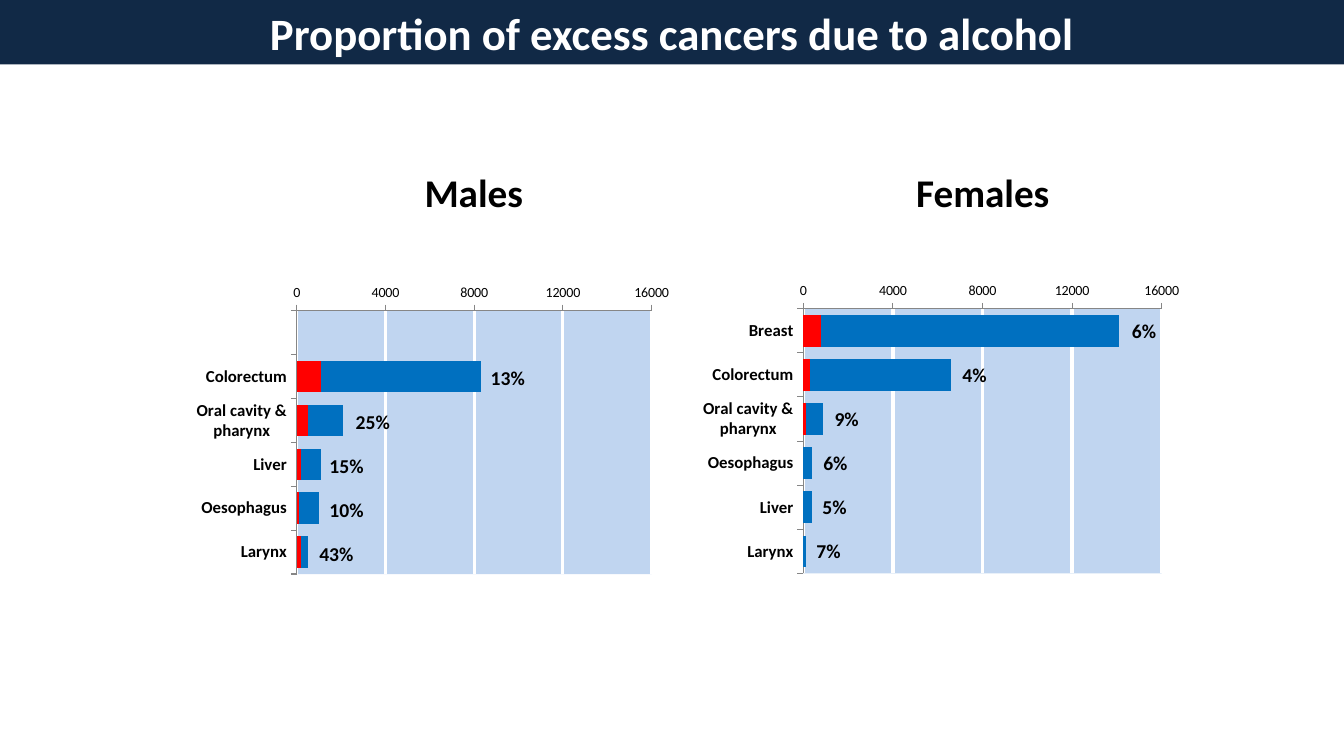
from dataclasses import dataclass

from lxml import etree
from pptx import Presentation
from pptx.chart.data import CategoryChartData
from pptx.dml.color import RGBColor
from pptx.enum.chart import XL_AXIS_CROSSES, XL_CHART_TYPE, XL_TICK_MARK
from pptx.enum.shapes import MSO_SHAPE
from pptx.enum.text import MSO_ANCHOR, PP_ALIGN
from pptx.oxml.ns import qn
from pptx.util import Pt

STACKED_BARS = XL_CHART_TYPE.BAR_STACKED
CROSS_AT_MAX = XL_AXIS_CROSSES.MAXIMUM
TICK_OUT = XL_TICK_MARK.OUTSIDE
TICK_NONE = XL_TICK_MARK.NONE
RECTANGLE = MSO_SHAPE.RECTANGLE
MIDDLE = MSO_ANCHOR.MIDDLE
LEFT, CENTER = PP_ALIGN.LEFT, PP_ALIGN.CENTER


@dataclass(frozen=True)
class Theme:
    font: str = "Calibri"
    banner: str = "112946"
    white: str = "FFFFFF"
    ink: str = "000000"
    axis: str = "868686"
    plot: str = "C0D5F0"
    excess: str = "FF0000"
    remaining: str = "0070C0"
    title_size: int = 32
    heading_size: int = 28
    share_size: int = 14
    category_size: int = 12
    scale_size: int = 10


THEME = Theme()
SLIDE_WIDTH, SLIDE_HEIGHT = 960, 540
ROW_STEP = 31.4

# Each panel: heading, chart frame, inner plot fractions, data and share labels.
# A row holds the cancer site, due to alcohol, the rest, share, share's left edge.
PANELS = [
    {
        "heading": "Females",
        "heading_left": 600.5,
        "frame": (489.6, 177.1, 360, 254.2),
        "plot": (0.234, 0.171, 0.711, 0.744),
        "first_share_top": 224.4,
        "rows": [
            ("Breast", 800, 13300, "6%", 801.4),
            ("Colorectum", 300, 6300, "4%", 680.4),
            ("Oral cavity & pharynx", 100, 800, "9%", 589),
            ("Oesophagus", 0, 400, "6%", 581),
            ("Liver", 0, 400, "5%", 580.3),
            ("Larynx", 0, 100, "7%", 576),
        ],
    },
    {
        "heading": "Males",
        "heading_left": 236.9,
        "frame": (126.7, 202.3, 360, 238.3),
        "plot": (0.237, 0.082, 0.704, 0.79),
        "first_share_top": 226.4,
        "rows": [
            ("", None, None, None, None),
            ("Colorectum", 1100, 7200, "13%", 343.4),
            ("Oral cavity & pharynx", 500, 1600, "25%", 247),
            ("Liver", 200, 900, "15%", 228.2),
            ("Oesophagus", 100, 900, "10%", 228.2),
            ("Larynx", 200, 300, "43%", 221),
        ],
    },
]


def rgb(color):
    return RGBColor.from_string(color)


def style_font(font, size, color=THEME.ink, bold=True):
    font.name = THEME.font
    font.size = Pt(size)
    font.bold = bold
    font.color.rgb = rgb(color)


def add_label(slide, text, box, size, align=LEFT):
    frame = slide.shapes.add_textbox(*map(Pt, box)).text_frame
    frame.word_wrap = True
    paragraph = frame.paragraphs[0]
    paragraph.text = text
    paragraph.alignment = align
    style_font(paragraph.font, size)


def add_banner(slide, text):
    banner = slide.shapes.add_shape(RECTANGLE, 0, 0, Pt(SLIDE_WIDTH), Pt(46.1))
    banner.shadow.inherit = False
    banner.fill.solid()
    banner.fill.fore_color.rgb = rgb(THEME.banner)
    banner.line.fill.background()
    banner.text_frame.word_wrap = True
    banner.text_frame.vertical_anchor = MIDDLE
    title = banner.text_frame.paragraphs[0]
    title.text = text
    title.alignment = CENTER
    style_font(title.font, THEME.title_size, THEME.white)


def style_plot_area(chart, fractions):
    """Fix the inner plot rectangle and fill it."""
    area = chart.element.find(".//" + qn("c:plotArea"))
    layout = area.find(qn("c:layout"))
    if layout is None:
        layout = etree.Element(qn("c:layout"))
        area.insert(0, layout)
    manual = etree.SubElement(layout, qn("c:manualLayout"))
    settings = [("layoutTarget", "inner"), ("xMode", "edge"), ("yMode", "edge")]
    settings += zip("xywh", map(str, fractions))
    for tag, value in settings:
        etree.SubElement(manual, qn(f"c:{tag}")).set("val", value)

    properties = etree.SubElement(area, qn("c:spPr"))
    fill = etree.SubElement(properties, qn("a:solidFill"))
    etree.SubElement(fill, qn("a:srgbClr")).set("val", THEME.plot)


def style_axis(axis, size, bold):
    axis.major_tick_mark = TICK_OUT
    axis.minor_tick_mark = TICK_NONE
    axis.format.line.color.rgb = rgb(THEME.axis)
    axis.format.line.width = Pt(0.75)
    style_font(axis.tick_labels.font, size, bold=bold)


def add_cancer_chart(slide, frame, plot_fractions, rows):
    sites, excess, remaining, *_ = zip(*rows)
    data = CategoryChartData()
    data.categories = sites
    data.add_series("Series 1", excess)
    data.add_series("Series 2", remaining)
    chart = slide.shapes.add_chart(STACKED_BARS, *map(Pt, frame), data).chart
    chart.has_legend = False
    chart.has_title = False
    style_font(chart.font, THEME.scale_size, bold=False)

    # Bars
    bars = chart.plots[0]
    bars.gap_width = 40
    bars.overlap = 100
    bars.vary_by_categories = False
    for series, color in zip(bars.series, (THEME.excess, THEME.remaining)):
        series.format.fill.solid()
        series.format.fill.fore_color.rgb = rgb(color)

    # Axes: first site on top, scale at the bottom
    site_axis, scale = chart.category_axis, chart.value_axis
    style_axis(site_axis, THEME.category_size, True)
    site_axis.reverse_order = True
    site_axis.crosses = CROSS_AT_MAX
    style_axis(scale, THEME.scale_size, False)
    scale.minimum_scale = 0
    scale.maximum_scale = 16000
    scale.major_unit = 4000
    scale.tick_labels.number_format = "0"
    scale.tick_labels.number_format_is_linked = False
    scale.has_major_gridlines = True
    scale.major_gridlines.format.line.color.rgb = rgb(THEME.white)
    scale.major_gridlines.format.line.width = Pt(2.25)

    style_plot_area(chart, plot_fractions)


def add_panel(slide, panel):
    add_cancer_chart(slide, panel["frame"], panel["plot"], panel["rows"])
    heading_box = (panel["heading_left"], 116.6, 203, 41)
    add_label(slide, panel["heading"], heading_box, THEME.heading_size, CENTER)
    for row, (*_, share, left) in enumerate(panel["rows"]):
        if share:
            top = panel["first_share_top"] + row * ROW_STEP
            add_label(slide, share, (left, top, 54, 24.5), THEME.share_size)


def main():
    deck = Presentation()
    deck.slide_width, deck.slide_height = Pt(SLIDE_WIDTH), Pt(SLIDE_HEIGHT)
    slide = deck.slides.add_slide(deck.slide_layouts[6])
    for panel in PANELS:
        add_panel(slide, panel)
    add_banner(slide, "Proportion of excess cancers due to alcohol")
    deck.save("out.pptx")


if __name__ == "__main__":
    main()
